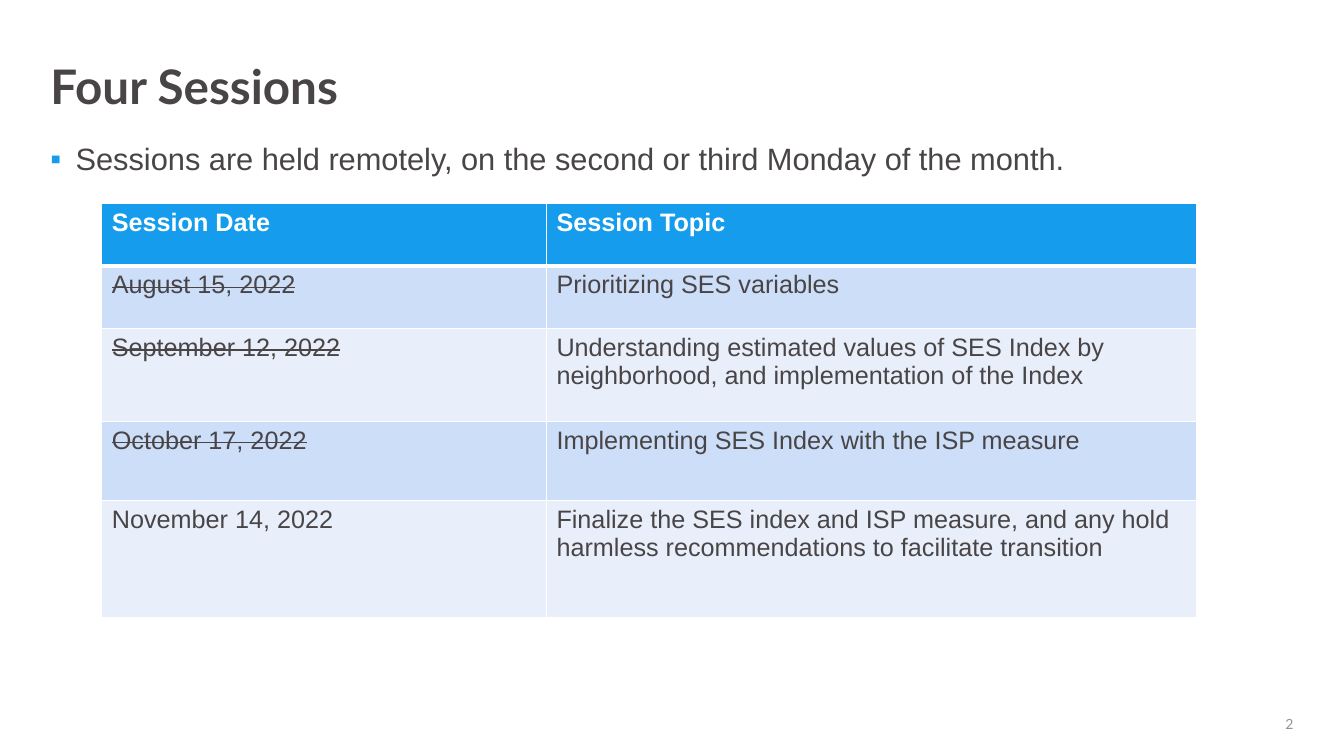
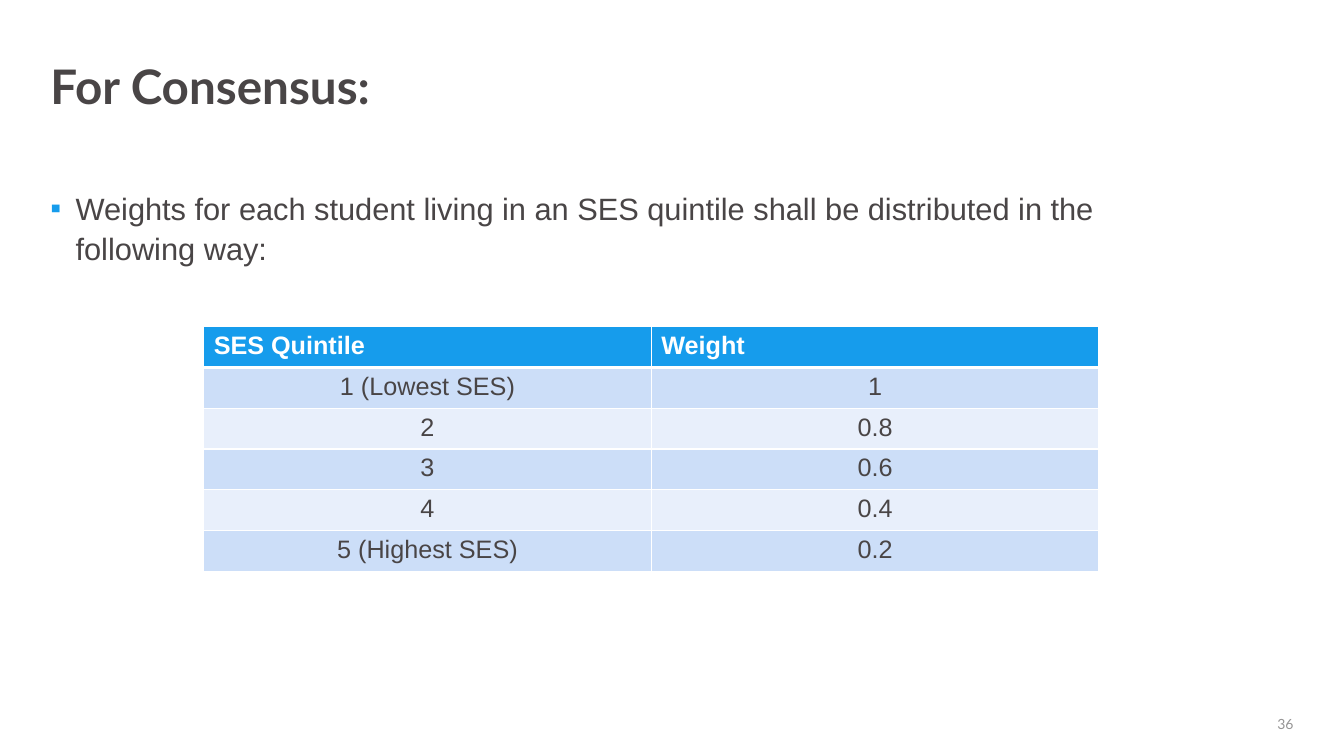
from lxml import etree
from pptx import Presentation
from pptx.dml.color import RGBColor
from pptx.enum.text import MSO_ANCHOR, MSO_AUTO_SIZE, PP_ALIGN
from pptx.oxml.ns import qn
from pptx.util import Inches, Pt

TOP, MIDDLE = MSO_ANCHOR.TOP, MSO_ANCHOR.MIDDLE
LEFT, CENTER, RIGHT = PP_ALIGN.LEFT, PP_ALIGN.CENTER, PP_ALIGN.RIGHT
NO_FIT = MSO_AUTO_SIZE.NONE
COLORS = {
    "text": "494546",
    "muted": "959494",
    "accent": "169CEC",
    "odd": "CCDEF8",
    "even": "E8EFFB",
    "white": "FFFFFF",
}
HEAD, BODY = "Lato", "Arial"
EDGE = 0.5

SESSIONS = [
    ("Session Date", "Session Topic"),
    ("August 15, 2022", "Prioritizing SES variables"),
    ("September 12, 2022", "Understanding estimated values of SES Index by "
     "neighborhood, and implementation of the Index"),
    ("October 17, 2022", "Implementing SES Index with the ISP measure"),
    ("November 14, 2022", "Finalize the SES index and ISP measure, and any hold "
     "harmless recommendations to facilitate transition"),
]
PAST = {"August 15, 2022", "September 12, 2022", "October 17, 2022"}
WEIGHTS = [
    ("SES Quintile", "Weight"),
    ("1 (Lowest SES)", "1"),
    ("2", "0.8"),
    ("3", "0.6"),
    ("4", "0.4"),
    ("5 (Highest SES)", "0.2"),
]


def color(name):
    """Return the palette colour of this name."""
    return RGBColor.from_string(COLORS[name])


def style(par, size, face, tint, bold=False, align=LEFT):
    """Set the font and alignment of a paragraph."""
    par.alignment = align
    font = par.font
    font.size, font.name, font.bold = Pt(size), face, bold
    font.color.rgb = color(tint)


def fill_box(shape, text, box, pads, anchor=TOP):
    """Place a text shape and return its only paragraph."""
    shape.left, shape.top, shape.width, shape.height = map(Inches, box)
    frame = shape.text_frame
    frame.text = text
    frame.word_wrap, frame.auto_size = True, NO_FIT
    frame.vertical_anchor = anchor
    frame.margin_left = frame.margin_right = 0
    frame.margin_top, frame.margin_bottom = map(Inches, pads)
    return frame.paragraphs[0]


def add_bullet(par):
    """Give a paragraph a square accent bullet with a hanging indent."""
    props = par._p.get_or_add_pPr()
    props.set("marL", str(Inches(0.25)))
    props.set("indent", str(-Inches(0.25)))
    tint = etree.SubElement(props, qn("a:buClr"))
    etree.SubElement(tint, qn("a:srgbClr"), val=COLORS["accent"])
    etree.SubElement(props, qn("a:buFont"), typeface=BODY)
    etree.SubElement(props, qn("a:buChar"), char="▪")


def add_page(deck, title, point, top, height, number):
    """Add a slide with its title, bullet point and page number."""
    slide = deck.slides.add_slide(deck.slide_layouts[1])
    par = fill_box(slide.shapes.title, title, (EDGE, 0.58, 12.33, 1.27), (0.05, 0.05))
    par.line_spacing = 0.9
    style(par, 34, HEAD, "text", True)

    par = fill_box(slide.placeholders[1], point, (EDGE, top, 11.17, height), (0, 0.1))
    add_bullet(par)
    par.line_spacing = 1.08
    par.space_before, par.space_after = Pt(0), Pt(16)
    style(par, 22, BODY, "text")

    label = slide.shapes.add_textbox(0, 0, 0, 0)
    par = fill_box(label, number, (9.83, 7.07, 3, 0.23), (0, 0), MIDDLE)
    style(par, 10, HEAD, "muted", align=RIGHT)
    return slide


def add_edges(cell, row):
    """Draw white cell borders, thick below the header row."""
    props = cell._tc.get_or_add_tcPr()
    widths = {"L": 1, "R": 1, "T": 3 if row == 1 else 1, "B": 3 if row == 0 else 1}
    for side, width in widths.items():
        line = etree.SubElement(props, qn(f"a:ln{side}"), w=str(Pt(width)))
        solid = etree.SubElement(line, qn("a:solidFill"))
        etree.SubElement(solid, qn("a:srgbClr"), val=COLORS["white"])


def fill_cell(cell, text, row, align):
    """Write and format one table cell."""
    cell.text = text
    add_edges(cell, row)
    cell.fill.solid()
    band = "odd" if row % 2 else "even"
    cell.fill.fore_color.rgb = color(band if row else "accent")
    par = cell.text_frame.paragraphs[0]
    if row:
        style(par, 18, BODY, "text", align=align)
    else:
        style(par, 18, BODY, "white", True)
    if text in PAST:
        par.runs[0]._r.get_or_add_rPr().set("strike", "sngStrike")


def add_grid(slide, data, left, top, widths, heights, align=LEFT):
    """Add a banded table with a header row."""
    box = map(Inches, (left, top, sum(widths), sum(heights)))
    table = slide.shapes.add_table(len(data), len(widths), *box).table
    for col, width in zip(table.columns, widths):
        col.width = Inches(width)
    for row, height in zip(table.rows, heights):
        row.height = Inches(height)
    for row, texts in enumerate(data):
        for col, text in enumerate(texts):
            fill_cell(table.cell(row, col), text, row, align)


def main():
    """Build and save the deck."""
    deck = Presentation()
    deck.slide_width, deck.slide_height = Inches(13.33), Inches(7.5)

    slide = add_page(
        deck, "Four Sessions",
        "Sessions are held remotely, on the second or third Monday of the month.",
        1.36, 0.49, "2")
    add_grid(slide, SESSIONS, 1.01, 2.02, [4.41, 6.45], [0.62, 0.62, 0.92, 0.79, 1.16])

    slide = add_page(
        deck, "For Consensus:",
        "Weights for each student living in an SES quintile shall be "
        "distributed in the following way:",
        1.85, 4.78, "36")
    rows = len(WEIGHTS)
    add_grid(slide, WEIGHTS, 2.02, 3.24, [4.44] * 2, [2.43 / rows] * rows, CENTER)
    deck.save("out.pptx")


if __name__ == "__main__":
    main()
